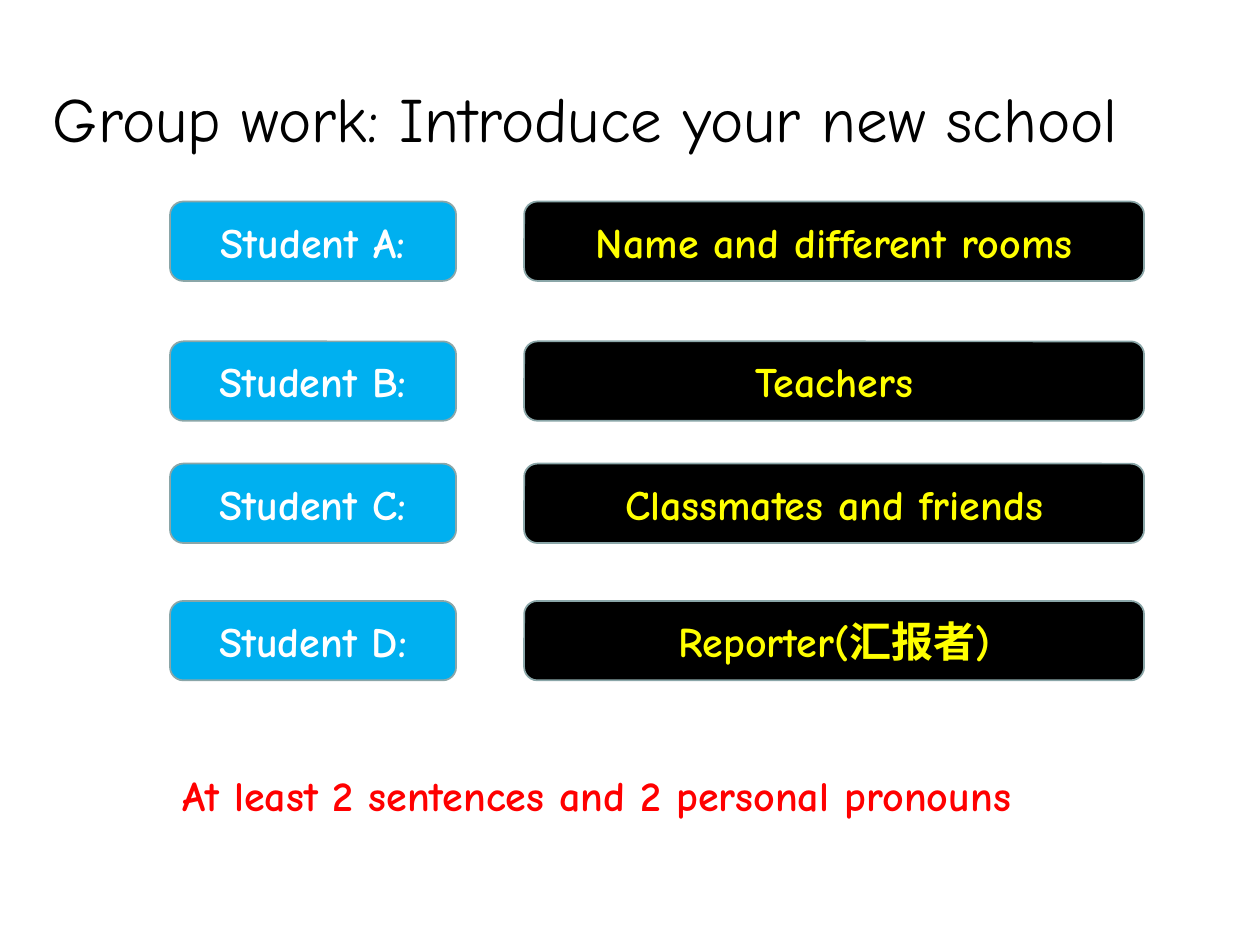
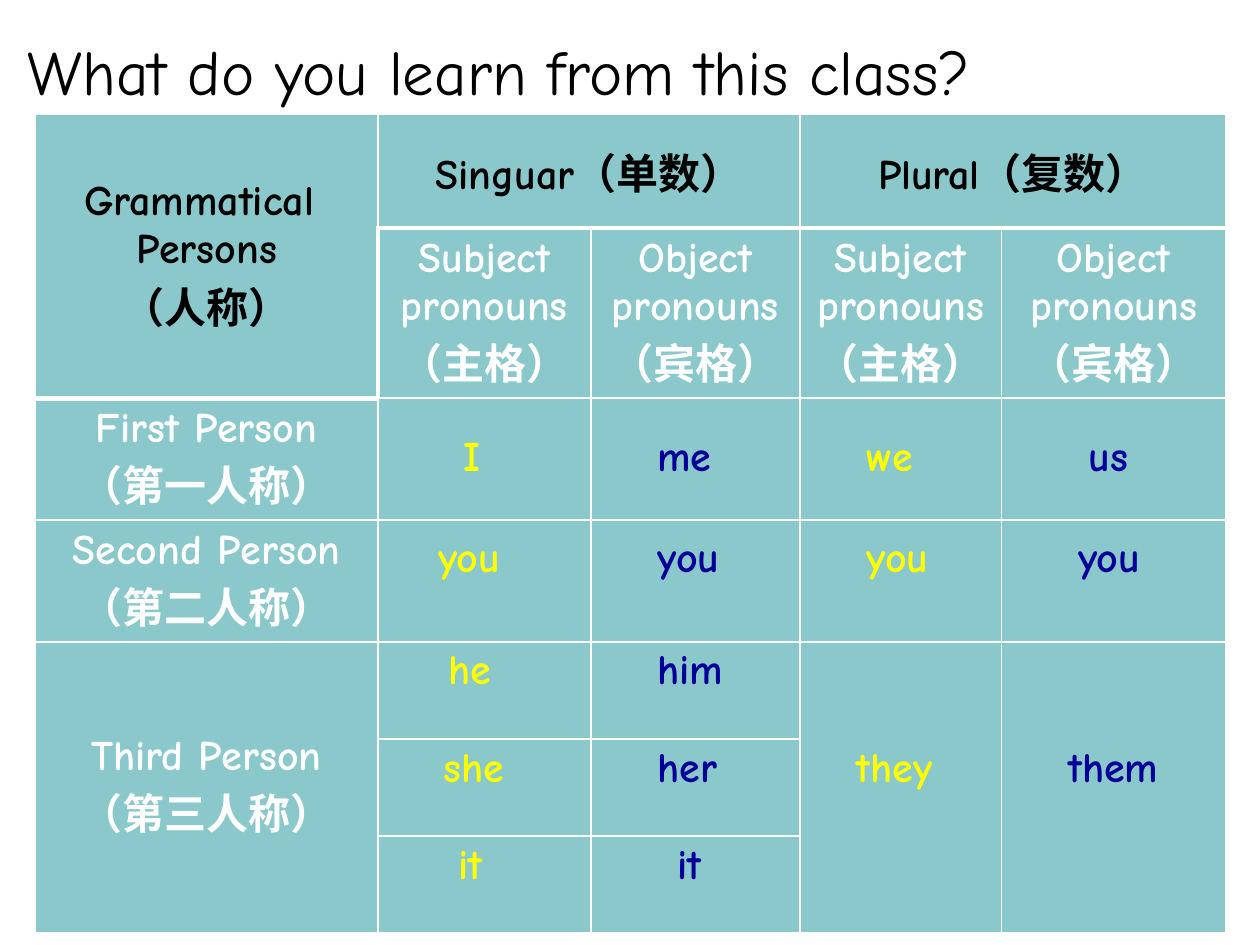
from lxml.etree import SubElement
from pptx import Presentation
from pptx.dml.color import RGBColor
from pptx.enum.shapes import MSO_SHAPE as Shape
from pptx.enum.text import MSO_ANCHOR as Anchor, MSO_AUTO_SIZE as AutoSize, PP_ALIGN as Align
from pptx.oxml.ns import qn
from pptx.util import Inches, Pt

BLACK = RGBColor(0x00, 0x00, 0x00)
WHITE = RGBColor(0xFF, 0xFF, 0xFF)
YELLOW = RGBColor(0xFF, 0xFF, 0x00)
RED = RGBColor(0xFF, 0x00, 0x00)
NAVY = RGBColor(0x00, 0x00, 0x99)
BLUE = RGBColor(0x00, 0xB0, 0xF0)
TEAL = RGBColor(0x8A, 0xC8, 0xCB)
GREY = RGBColor(0x8A, 0xA6, 0xA8)

TITLE_ONLY = 5
TITLE_FONT = {"name": "Comic Neue", "size": Pt(36), "bold": False}
BODY_FONT = {"name": "Comic Neue", "size": Pt(24), "bold": True}

ROLES = [
    (1.6, "Student A:", "Name and different rooms"),
    (2.71, "Student B:", "Teachers"),
    (3.68, "Student C:", "Classmates and friends"),
    (4.77, "Student D:", "Reporter(汇报者)"),
]

COLUMN_WIDTHS = [2.72, 1.69, 1.66, 1.6, 1.78]
ROW_HEIGHTS = [0.9, 1.3, 0.9, 0.9, 0.77, 0.77, 0.77]
MERGES = [((0, 0), (1, 0)), ((0, 1), (0, 2)), ((0, 3), (0, 4)),
          ((4, 0), (6, 0)), ((4, 3), (6, 3)), ((4, 4), (6, 4))]
SUBJECT = "Subject pronouns\n（主格）"
OBJECT = "Object pronouns\n（宾格）"
HEADINGS = {
    (0, 0): "Grammatical \nPersons\n（人称）",
    (0, 1): "Singuar（单数）",
    (0, 3): "Plural（复数）",
    (1, 1): SUBJECT, (1, 2): OBJECT, (1, 3): SUBJECT, (1, 4): OBJECT,
    (2, 0): "First Person\n（第一人称）",
    (3, 0): "Second Person\n（第二人称）",
    (4, 0): "Third Person\n（第三人称）",
}

# Each row: top, then (left, word) pairs alternating subject and object
PRONOUNS = [
    (3.36, [(3.58, "I"), (5.12, "me"), (6.78, "we"), (8.54, "us")]),
    (4.16, [(3.38, "you"), (5.12, "you"), (6.78, "you"), (8.46, "you")]),
    (5.05, [(3.46, "he"), (5.12, "him")]),
    (5.83, [(3.42, "she"), (5.12, "her"), (6.7, "they"), (8.38, "them")]),
    (6.6, [(3.54, "it"), (5.28, "it")]),
]


def border_width(row, column, side):
    """Points: thick under the top headings and around the corner cell."""
    thick = {
        "L": (row, column) == (1, 1),
        "R": False,
        "T": (row == 1 and column > 0) or (row, column) == (2, 0),
        "B": row == 0 or (row, column) == (1, 0),
    }
    return 3 if thick[side] else 1


class Deck:
    def __init__(self):
        self.presentation = Presentation()
        self.presentation.slide_width = Inches(10)
        self.presentation.slide_height = Inches(7.5)
        self.slide = None

    def set_text(self, frame, text, color, font=BODY_FONT, align=Align.LEFT):
        frame.text = text
        for paragraph in frame.paragraphs:
            paragraph.alignment = align
            for run in paragraph.runs:
                for name, value in font.items():
                    setattr(run.font, name, value)
                run.font.color.rgb = color

    def add_slide(self, title, left, top, width, height):
        layout = self.presentation.slide_layouts[TITLE_ONLY]
        self.slide = self.presentation.slides.add_slide(layout)
        shape = self.slide.shapes.title
        box = {"left": left, "top": top, "width": width, "height": height}
        for name, value in box.items():
            setattr(shape, name, Inches(value))
        frame = shape.text_frame
        frame.auto_size = AutoSize.NONE
        frame.vertical_anchor = Anchor.TOP
        self.set_text(frame, title, BLACK, TITLE_FONT)

    def add_label(self, text, color, left, top, width, height=0.5):
        box = self.slide.shapes.add_textbox(
            Inches(left), Inches(top), Inches(width), Inches(height))
        box.text_frame.word_wrap = True
        self.set_text(box.text_frame, text, color)

    def add_button(self, text, color, fill, left, top, width, height=0.63):
        shape = self.slide.shapes.add_shape(
            Shape.ROUNDED_RECTANGLE,
            Inches(left), Inches(top), Inches(width), Inches(height))
        shape.shadow.inherit = False
        shape.fill.solid()
        shape.fill.fore_color.rgb = fill
        shape.line.color.rgb = GREY
        shape.line.width = Pt(1)
        shape.text_frame.vertical_anchor = Anchor.MIDDLE
        self.set_text(shape.text_frame, text, color, align=Align.CENTER)

    def add_borders(self, cell, row, column):
        properties = cell._tc.get_or_add_tcPr()
        for side in "LRTB":
            width = Pt(border_width(row, column, side))
            line = SubElement(properties, qn(f"a:ln{side}"), w=str(width))
            fill = SubElement(line, qn("a:solidFill"))
            SubElement(fill, qn("a:srgbClr"), val=str(WHITE))

    def add_grid(self, left, top):
        table = self.slide.shapes.add_table(
            len(ROW_HEIGHTS), len(COLUMN_WIDTHS), Inches(left), Inches(top),
            Inches(sum(COLUMN_WIDTHS)), Inches(sum(ROW_HEIGHTS))).table
        table.first_row = table.horz_banding = False
        for column, width in zip(table.columns, COLUMN_WIDTHS):
            column.width = Inches(width)
        for row, height in zip(table.rows, ROW_HEIGHTS):
            row.height = Inches(height)
        for first, last in MERGES:
            table.cell(*first).merge(table.cell(*last))
        for row in range(len(ROW_HEIGHTS)):
            for column in range(len(COLUMN_WIDTHS)):
                cell = table.cell(row, column)
                self.add_borders(cell, row, column)
                cell.fill.solid()
                cell.fill.fore_color.rgb = TEAL
                cell.vertical_anchor = Anchor.MIDDLE
                if (row, column) in HEADINGS:
                    self.set_text(cell.text_frame, HEADINGS[row, column],
                                  BLACK if row == 0 else WHITE, align=Align.CENTER)


def build_group_work(deck):
    deck.add_slide("Group work: Introduce your new school", 0.32, 0.58, 9.66, 0.71)
    for top, student, task in ROLES:
        deck.add_button(student, WHITE, BLUE, 1.35, top, 2.27)
        deck.add_button(task, YELLOW, BLACK, 4.16, top, 4.92)
    deck.add_label("At least 2 sentences and 2 personal pronouns", RED, 1.35, 6.06, 7.73)


def build_pronoun_summary(deck):
    deck.add_slide("What do you learn from this class?", 0.12, 0.21, 8.46, 0.7)
    deck.add_grid(0.28, 0.91)
    for top, words in PRONOUNS:
        for index, (left, word) in enumerate(words):
            color = NAVY if index % 2 else YELLOW
            deck.add_label(word, color, left, top, 1.05 if len(word) > 3 else 0.88)


def main():
    deck = Deck()
    build_group_work(deck)
    build_pronoun_summary(deck)
    deck.presentation.save("out.pptx")


if __name__ == "__main__":
    main()
